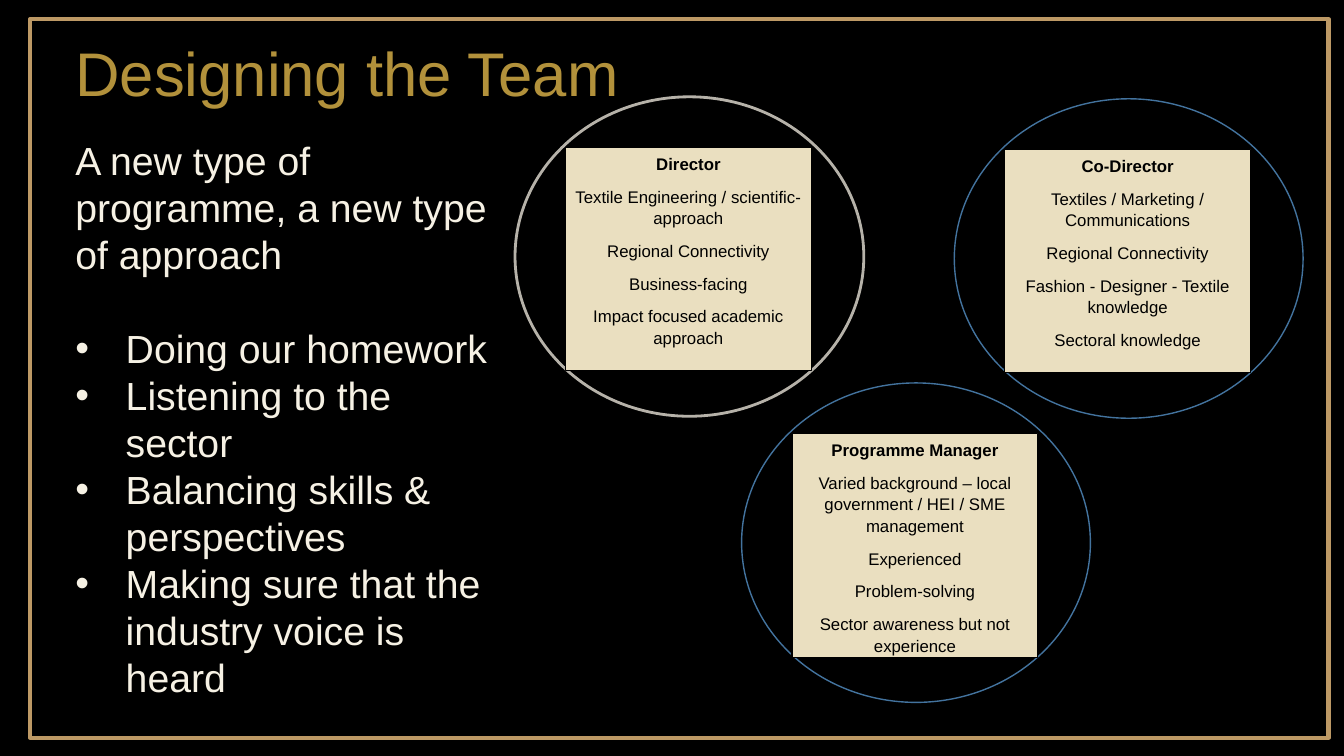
"""Build the team design slide with three role circles."""
from lxml import etree
from pptx import Presentation
from pptx.dml.color import RGBColor
from pptx.enum.shapes import MSO_SHAPE
from pptx.enum.text import MSO_ANCHOR, PP_ALIGN
from pptx.oxml.ns import qn
from pptx.util import Cm, Pt

RECTANGLE = MSO_SHAPE.RECTANGLE
OVAL = MSO_SHAPE.OVAL
TOP = MSO_ANCHOR.TOP
MIDDLE = MSO_ANCHOR.MIDDLE
LEFT = PP_ALIGN.LEFT
CENTER = PP_ALIGN.CENTER

BLACK = RGBColor(0x00, 0x00, 0x00)
BRONZE = RGBColor(0xBD, 0x99, 0x65)
GOLD = RGBColor(0xB2, 0x91, 0x3B)
IVORY = RGBColor(0xF6, 0xF1, 0xE4)
SAND = RGBColor(0xEA, 0xDF, 0xC0)
BLUE = RGBColor(0x43, 0x73, 0x9E)
GREY = RGBColor(0xB6, 0xB2, 0xA9)

FONT = "Arial"
CIRCLE_WIDTH, CIRCLE_HEIGHT = 8.79, 8.05
CARD_WIDTH, CARD_HEIGHT, CARD_OFFSET = 6.2, 5.64, 1.27
BULLET_INDENT = Cm(1.27)

INTRO = "A new type of programme, a new type of approach"
POINTS = [
    "Doing our homework",
    "Listening to the sector",
    "Balancing skills & perspectives",
    "Making sure that the industry voice is heard",
]
ROLES = [
    (24.05, 2.49, BLUE, 1, [
        "Co-Director",
        "Textiles / Marketing / Communications",
        "Regional Connectivity",
        "Fashion - Designer - Textile knowledge",
        "Sectoral knowledge",
    ]),
    (12.98, 2.44, GREY, 2, [
        "Director",
        "Textile Engineering / scientific-approach",
        "Regional Connectivity",
        "Business-facing",
        "Impact focused academic approach",
    ]),
    (18.69, 9.65, BLUE, 1, [
        "Programme Manager",
        "Varied background – local government / HEI / SME management",
        "Experienced",
        "Problem-solving",
        "Sector awareness but not experience",
    ]),
]


def add_outline(shapes, kind, left, top, width, height, color, weight):
    """Add an unfilled shape with a coloured outline and return it."""
    shape = shapes.add_shape(kind, Cm(left), Cm(top), Cm(width), Cm(height))
    shape.shadow.inherit = False
    shape.fill.background()
    shape.line.color.rgb = color
    shape.line.width = Pt(weight)
    return shape


def add_text_box(slide, left, top, width, height, anchor):
    """Add a wrapping text box and return its text frame."""
    box = slide.shapes.add_textbox(Cm(left), Cm(top), Cm(width), Cm(height))
    frame = box.text_frame
    frame.word_wrap = True
    frame.vertical_anchor = anchor
    return frame


def write_paragraphs(frame, lines, size, color, align=LEFT):
    """Fill a text frame with one paragraph for each line."""
    frame.text = "\n".join(lines)
    for para in frame.paragraphs:
        para.alignment = align
        for span in para.runs:
            span.font.name = FONT
            span.font.size = Pt(size)
            span.font.color.rgb = color


def add_bullet(para):
    """Give a paragraph a round bullet and a hanging indent."""
    properties = para._p.get_or_add_pPr()
    properties.set("marL", str(BULLET_INDENT))
    properties.set("indent", str(-BULLET_INDENT))
    etree.SubElement(properties, qn("a:buFont"), typeface=FONT)
    etree.SubElement(properties, qn("a:buChar"), char="•")


def add_title(slide):
    """Add the slide title."""
    frame = add_text_box(slide, 1.65, 0.97, 29.21, 1.9, MIDDLE)
    write_paragraphs(frame, ["Designing the Team"], 44, GOLD)
    frame.paragraphs[0].line_spacing = 0.9


def add_approach(slide):
    """Add the introduction with its bulleted points."""
    frame = add_text_box(slide, 1.65, 3.3, 11.28, 14.73, TOP)
    write_paragraphs(frame, [INTRO, *POINTS], 28, IVORY)
    points = frame.paragraphs[1:]
    points[0].space_before = Pt(33.6)
    for para in points:
        add_bullet(para)


def add_role(slide, left, top, color, weight, lines):
    """Add a circle holding a card that describes one role."""
    shapes = slide.shapes.add_group_shape().shapes
    add_outline(shapes, OVAL, left, top, CIRCLE_WIDTH, CIRCLE_HEIGHT, color, weight)
    card = add_outline(shapes, RECTANGLE, left + CARD_OFFSET, top + CARD_OFFSET,
                       CARD_WIDTH, CARD_HEIGHT, BLACK, 0.75)
    card.fill.solid()
    card.fill.fore_color.rgb = SAND
    frame = card.text_frame
    frame.word_wrap = True
    frame.vertical_anchor = TOP
    write_paragraphs(frame, lines, 12, BLACK, CENTER)
    for para in frame.paragraphs:
        para.line_spacing = 1.07
        para.space_after = Pt(8)
    frame.paragraphs[0].runs[0].font.bold = True


def main():
    """Build and save the deck."""
    deck = Presentation()
    deck.slide_width, deck.slide_height = Cm(33.87), Cm(19.05)
    slide = deck.slides.add_slide(deck.slide_layouts[6])
    slide.background.fill.solid()
    slide.background.fill.fore_color.rgb = BLACK
    add_outline(slide.shapes, RECTANGLE, 0.76, 0.48, 32.72, 18.11, BRONZE, 3)
    add_title(slide)
    for role in ROLES:
        add_role(slide, *role)
    add_approach(slide)
    deck.save("out.pptx")


if __name__ == "__main__":
    main()
